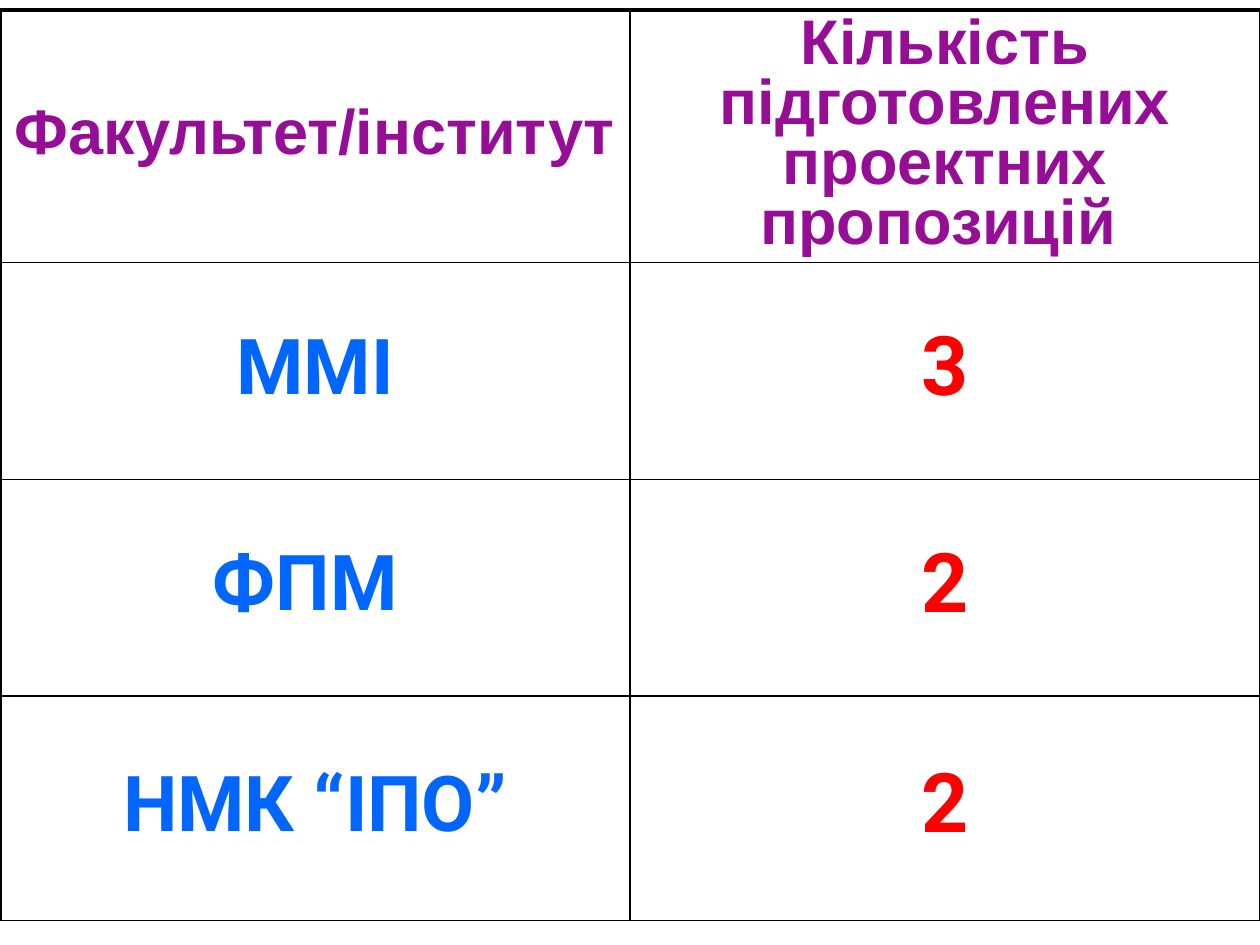
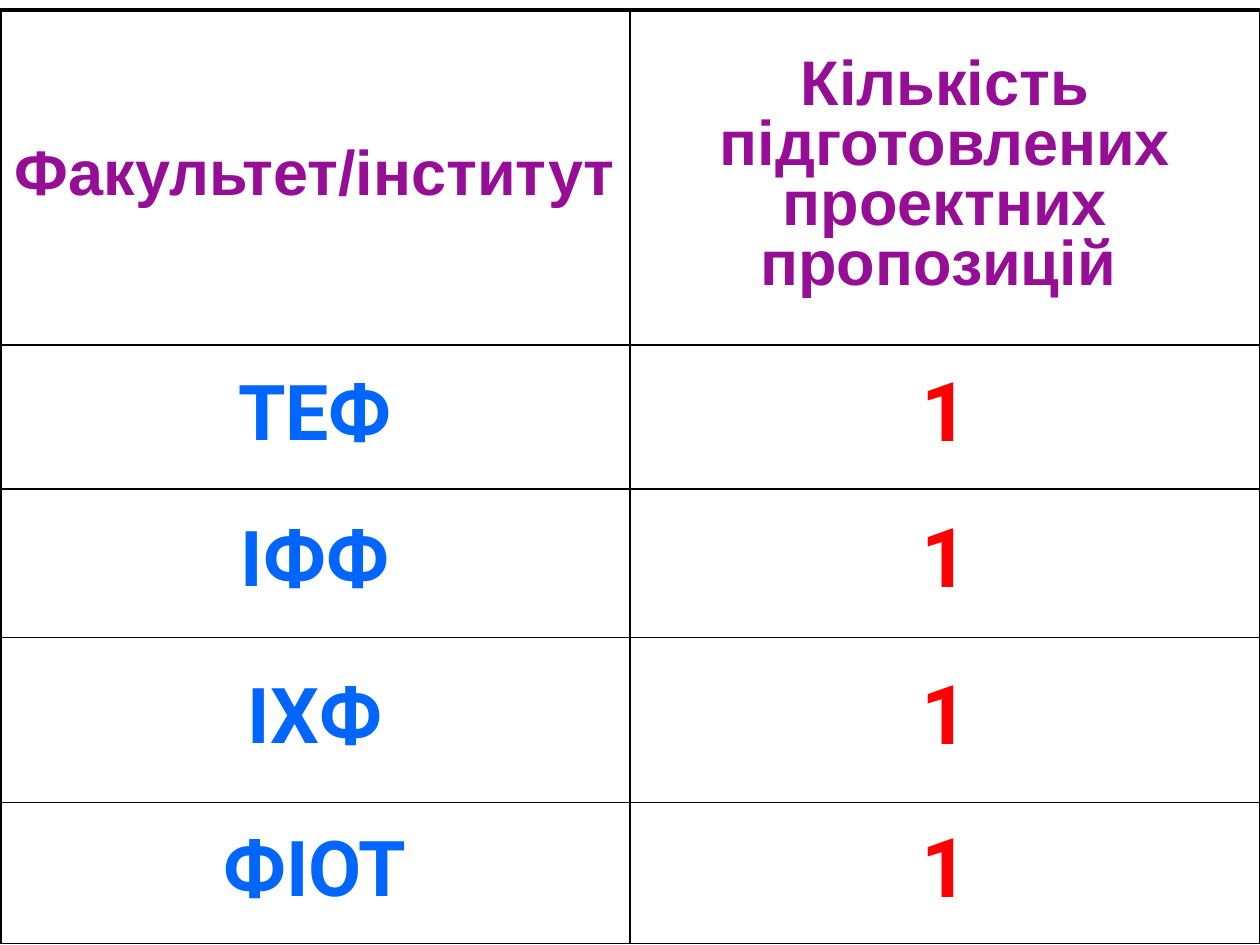
"""Build two slides that tabulate project proposals by faculty or institute."""
import pptx
import pptx.dml.color
import pptx.enum.text
import pptx.oxml
import pptx.oxml.ns
import pptx.util
from dataclasses import dataclass
from pptx.util import Inches

HEADINGS = ("Факультет/інститут", "Кількість підготовлених проектних пропозицій")
PAGES = [
    {
        "height": 7.37,
        "row_heights": [1.71, 1.72, 1.72, 1.78],
        "counts": [("ММІ", "3"), ("ФПМ ", "2"), ("НМК “ІПО”", "2")],
    },
    {
        "height": 7.42,
        "row_heights": [2.66, 1.14, 1.18, 1.31, 1.12],
        "counts": [("ТЕФ", "1"), ("ІФФ", "1"), ("ІХФ", "1"), ("ФІОТ", "1")],
    },
]
SLIDE_WIDTH, SLIDE_HEIGHT = 10, 7.5
TABLE_TOP = 0.08


@dataclass(frozen=True)
class Theme:
    heading_font: str = "Arial"
    body_font: str = "Roboto"
    heading_color: str = "960E96"
    faculty_color: str = "0066FF"
    count_color: str = "FF0000"
    paper: str = "FFFFFF"
    border: str = "000000"
    heading_size: int = 36
    gap_size: int = 28
    faculty_size: int = 44
    count_size: int = 47
    thin: float = 1
    thick: float = 2.25
    line_spacing: float = 0.85


THEME = Theme()
HEADING = {"font": THEME.heading_font, "size": THEME.heading_size, "color": THEME.heading_color}
GAP = {**HEADING, "size": THEME.gap_size, "color": THEME.paper}
BODY = (
    {"font": THEME.body_font, "size": THEME.faculty_size, "color": THEME.faculty_color},
    {"font": THEME.body_font, "size": THEME.count_size, "color": THEME.count_color},
)


def add_text(para, text, *, font, size, color):
    span = para.add_run()
    span.text = text
    span.font.name = font
    span.font.size = pptx.util.Pt(size)
    span.font.bold = True
    span.font.color.rgb = pptx.dml.color.RGBColor.from_string(color)


def set_space_before(para, percent):
    properties = para._p.get_or_add_pPr()
    properties.append(pptx.oxml.parse_xml(
        f'<a:spcBef {pptx.oxml.ns.nsdecls("a")}>'
        f'<a:spcPct val="{percent * 1000}"/></a:spcBef>'))


def set_borders(cell, row, column):
    widths = {
        "lnL": THEME.thin if column else THEME.thick,
        "lnR": THEME.thin,
        "lnT": THEME.thin if row else THEME.thick,
        "lnB": THEME.thin,
    }
    properties = cell._tc.get_or_add_tcPr()
    for position, (side, width) in enumerate(widths.items()):
        properties.insert(position, pptx.oxml.parse_xml(
            f'<a:{side} {pptx.oxml.ns.nsdecls("a")} w="{pptx.util.Pt(width)}">'
            f'<a:solidFill><a:srgbClr val="{THEME.border}"/></a:solidFill></a:{side}>'))


def fill_cell(cell, text, row, column):
    cell.fill.background()
    set_borders(cell, row, column)
    cell.vertical_anchor = pptx.enum.text.MSO_ANCHOR.MIDDLE
    cell.margin_left = cell.margin_right = Inches(0.09)
    cell.margin_top = cell.margin_bottom = Inches(0.05)
    para = cell.text_frame.paragraphs[0]
    para.alignment = pptx.enum.text.PP_ALIGN.CENTER
    para.line_spacing = THEME.line_spacing
    if row:
        add_text(para, text, **BODY[column])
        return
    set_space_before(para, 20)
    add_text(para, text, **HEADING)
    if column:
        add_text(para, " ", **GAP)


def add_page(deck, height, row_heights, counts):
    page = deck.slides.add_slide(deck.slide_layouts[6])
    page.background.fill.solid()
    page.background.fill.fore_color.rgb = pptx.dml.color.RGBColor.from_string(THEME.paper)
    rows = [HEADINGS, *counts]
    frame = page.shapes.add_table(
        len(rows), len(HEADINGS), 0, Inches(TABLE_TOP), Inches(SLIDE_WIDTH), Inches(height))
    table = frame.table
    table.first_row = table.horz_banding = False
    for row, texts in enumerate(rows):
        table.rows[row].height = Inches(row_heights[row])
        for column, text in enumerate(texts):
            fill_cell(table.cell(row, column), text, row, column)
    frame.height = Inches(height)


def main():
    deck = pptx.Presentation()
    deck.slide_width, deck.slide_height = Inches(SLIDE_WIDTH), Inches(SLIDE_HEIGHT)
    for content in PAGES:
        add_page(deck, **content)
    deck.save("out.pptx")


if __name__ == "__main__":
    main()
